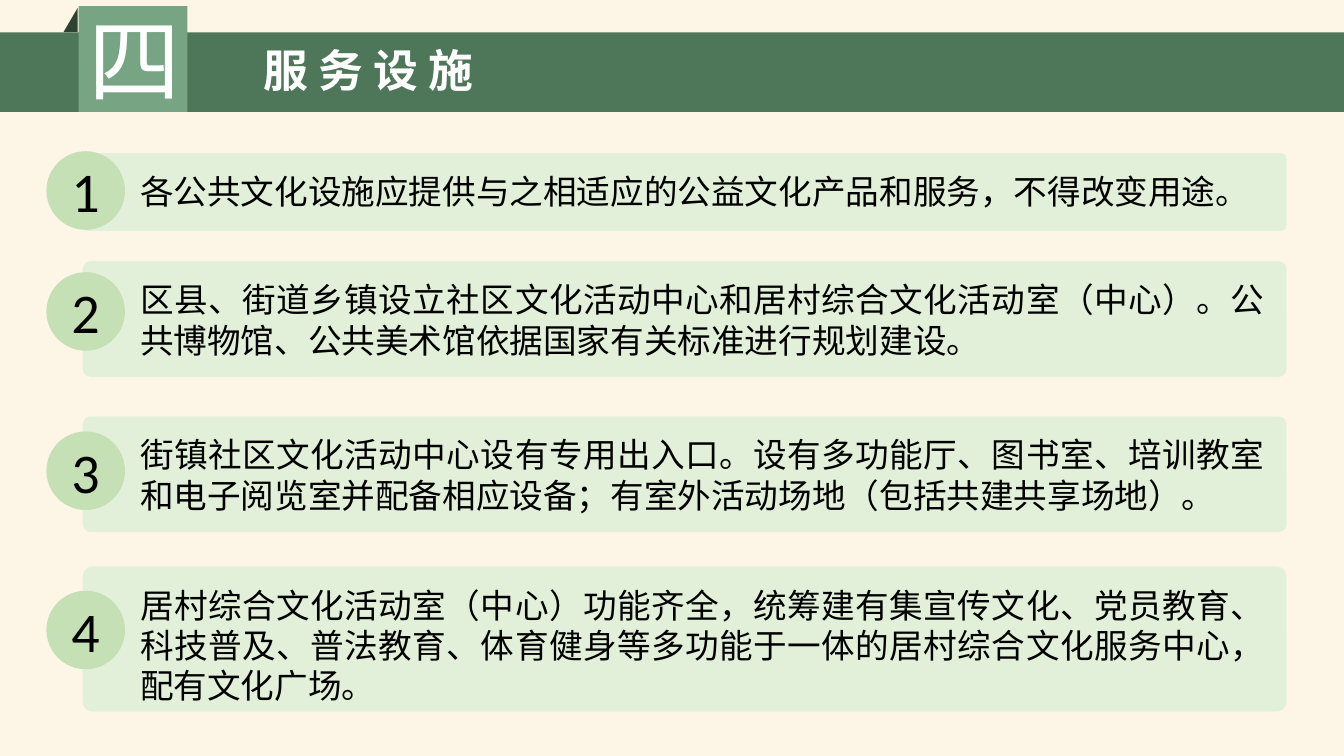
import pptx
import pptx.util
import pptx.dml.color
import pptx.enum.shapes
import pptx.enum.text
import pptx.oxml
import pptx.oxml.ns
from dataclasses import dataclass

Inches = pptx.util.Inches
SHAPE = pptx.enum.shapes.MSO_SHAPE
ALIGN = pptx.enum.text.PP_ALIGN
ANCHOR = pptx.enum.text.MSO_ANCHOR


@dataclass
class Theme:
    background: str = "FDF6E6"
    band: str = "4E7658"
    tab: str = "77A483"
    fold: str = "2D4332"
    panel: str = "E2F0D9"
    badge: str = "C5E0B4"
    light: str = "FFFFFF"
    dark: str = "000000"
    cjk: str = "Noto Sans CJK SC"
    numeral: str = "Roboto"
    digit: str = "Calibri"
    numeral_size: int = 66
    title_size: int = 32
    body_size: int = 24
    digit_size: int = 40


theme = Theme()


def add_block(kind, left, top, width, height, color):
    sp = slide.shapes.add_shape(kind, Inches(left), Inches(top), Inches(width), Inches(height))
    sp.shadow.inherit = False
    sp.fill.solid()
    sp.fill.fore_color.rgb = pptx.dml.color.RGBColor.from_string(color)
    sp.line.fill.background()
    return sp


def write(sp, text, font, size, color, align=ALIGN.LEFT, anchor=ANCHOR.TOP, wrap=True, bold=False):
    tf = sp.text_frame
    tf.word_wrap = wrap
    tf.auto_size = pptx.enum.text.MSO_AUTO_SIZE.NONE
    tf.vertical_anchor = anchor
    p = tf.paragraphs[0]
    p.alignment = align
    r = p.add_run()
    r.text = text
    r.font.name = font
    r.font.size = pptx.util.Pt(size)
    r.font.bold = bold
    r.font.color.rgb = pptx.dml.color.RGBColor.from_string(color)
    ea = pptx.oxml.parse_xml(f'<a:ea {pptx.oxml.ns.nsdecls("a")} typeface="{font}"/>')
    r.font._element.append(ea)


prs = pptx.Presentation()
prs.slide_width = Inches(13.33)
prs.slide_height = Inches(7.5)
slide = prs.slides.add_slide(prs.slide_layouts[5])
slide.background.fill.solid()
slide.background.fill.fore_color.rgb = pptx.dml.color.RGBColor.from_string(theme.background)

add_block(SHAPE.RECTANGLE, 0, 0.32, 13.33, 0.79, theme.band)
add_block(SHAPE.RECTANGLE, 0.78, 0.06, 1.08, 1.05, theme.tab)
fold = add_block(SHAPE.RIGHT_TRIANGLE, 0.63, 0.08, 0.14, 0.24, theme.fold)
fold._element.spPr.find(pptx.oxml.ns.qn("a:xfrm")).set("flipH", "1")
numeral = slide.shapes.add_textbox(Inches(0.78), Inches(-0.02), Inches(1.32), Inches(1.21))
write(numeral, "四", theme.numeral, theme.numeral_size, theme.light)

title = slide.shapes.title
title.left, title.top, title.width, title.height = Inches(2.51), Inches(0.37), Inches(2.4), Inches(0.64)
write(title, "服 务 设 施", theme.cjk, theme.title_size, theme.light, wrap=False, bold=True)
slide.shapes._spTree.append(title._element)

items = [
    (1.52, 0.77, 1.5, "各公共文化设施应提供与之相适应的公益文化产品和服务，不得改变用途。"),
    (2.59, 1.15, 2.7, "区县、街道乡镇设立社区文化活动中心和居村综合文化活动室（中心）。"
                      "公共博物馆、公共美术馆依据国家有关标准进行规划建设。"),
    (4.13, 1.15, 4.28, "街镇社区文化活动中心设有专用出入口。设有多功能厅、图书室、培训教室"
                       "和电子阅览室并配备相应设备；有室外活动场地（包括共建共享场地）。"),
    (5.62, 1.44, 5.86, "居村综合文化活动室（中心）功能齐全，统筹建有集宣传文化、党员教育、"
                       "科技普及、普法教育、体育健身等多功能于一体的居村综合文化服务中心，配有文化广场。"),
]
for number, (top, height, badge_top, text) in enumerate(items, 1):
    panel = add_block(SHAPE.ROUNDED_RECTANGLE, 0.82, top, 11.94, height, theme.panel)
    panel.adjustments[0] = 0.07
    body = slide.shapes.add_textbox(Inches(1.29), Inches(top + 0.13), Inches(11.35), Inches(height - 0.24))
    write(body, text, theme.cjk, theme.body_size, theme.dark, align=ALIGN.JUSTIFY)
    badge = add_block(SHAPE.OVAL, 0.46, badge_top, 0.78, 0.78, theme.badge)
    tf = badge.text_frame
    tf.margin_left = tf.margin_right = tf.margin_top = tf.margin_bottom = 0
    write(badge, str(number), theme.digit, theme.digit_size, theme.dark, ALIGN.CENTER, ANCHOR.MIDDLE)

prs.save("out.pptx")
